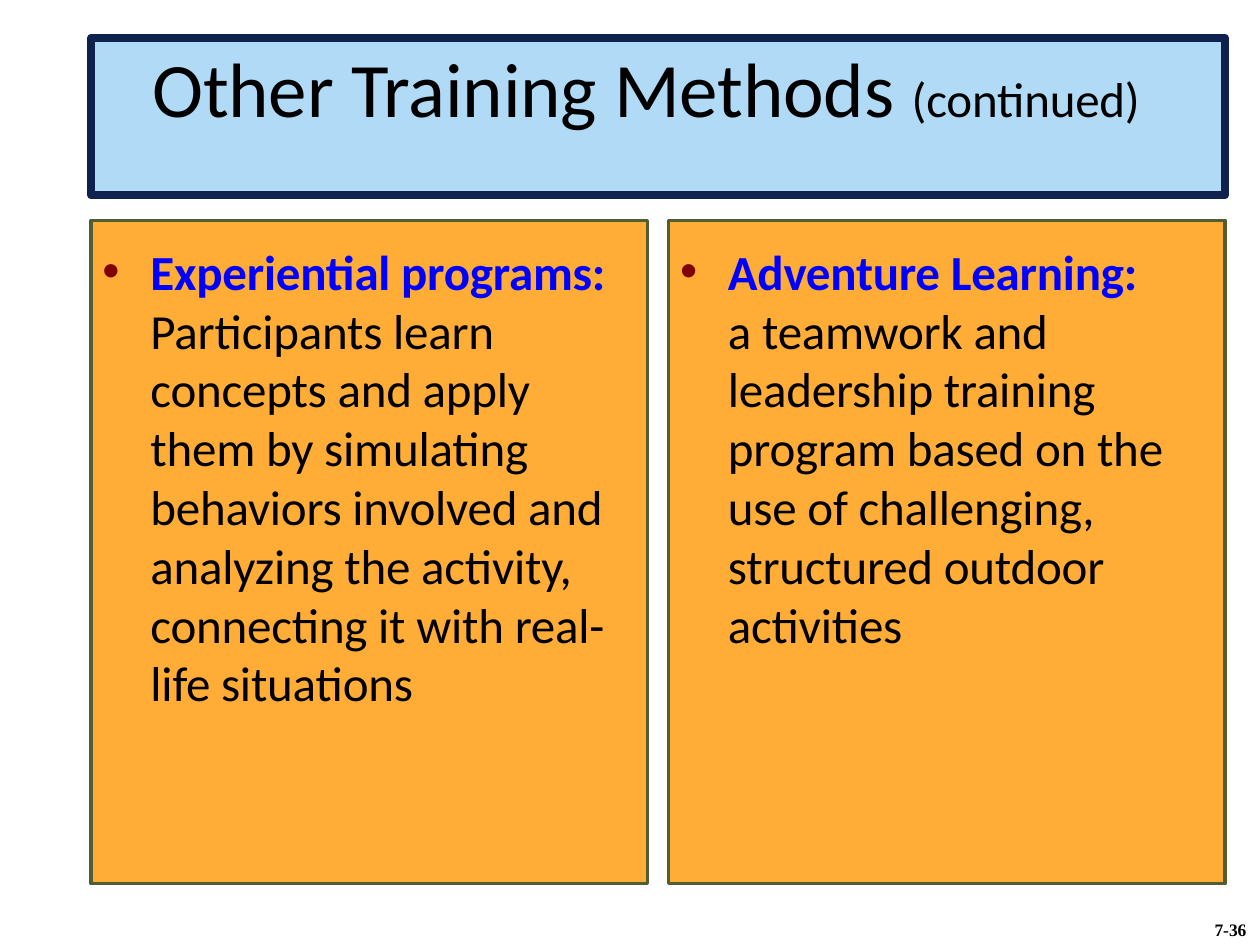
import pptx
import pptx.dml.color
import pptx.enum.shapes
import pptx.enum.text
import pptx.oxml
import pptx.oxml.ns
import pptx.util

Pt = pptx.util.Pt
LEFT = 52
PANEL_TOP = 126
PANEL_WIDTH = 318
PANEL_HEIGHT = 379
PANEL_PITCH = 330

PANELS = [
    (
        "Experiential programs:",
        "Participants learn concepts and apply them by simulating behaviors "
        "involved and analyzing the activity, connecting it with real-life situations",
    ),
    (
        "Adventure Learning:",
        "a teamwork and leadership training program based on the use of "
        "challenging, structured outdoor activities",
    ),
]


def color(value):
    return pptx.dml.color.RGBColor.from_string(value)


def set_attributes(target, values):
    for name, value in values.items():
        setattr(target, name, value)


class SlideBuilder:
    font_name = "Calibri"
    text_color = "000000"

    def __init__(self, slide):
        self.slide = slide

    def place(self, shape, left, top, width, height):
        bounds = {"left": left, "top": top, "width": width, "height": height}
        set_attributes(shape, {name: Pt(value) for name, value in bounds.items()})

    def paint(self, shape, fill, line, line_width):
        shape.fill.solid()
        shape.fill.fore_color.rgb = color(fill)
        shape.line.color.rgb = color(line)
        shape.line.width = Pt(line_width)

    def frame(self, shape, left=0, top=0, right=0, wrap=True):
        set_attributes(shape.text_frame, {
            "margin_left": Pt(left),
            "margin_top": Pt(top),
            "margin_right": Pt(right),
            "margin_bottom": 0,
            "word_wrap": wrap,
            "auto_size": pptx.enum.text.MSO_AUTO_SIZE.NONE,
            "vertical_anchor": pptx.enum.text.MSO_ANCHOR.TOP,
        })
        paragraph = shape.text_frame.paragraphs[0]
        paragraph.alignment = pptx.enum.text.PP_ALIGN.LEFT
        return paragraph

    def run(self, paragraph, text, size, bold=False, text_color=None, name=None, spacing=-10):
        run = paragraph.add_run()
        run.text = text
        set_attributes(run.font, {"name": name or self.font_name, "size": Pt(size), "bold": bold})
        run.font.color.rgb = color(text_color or self.text_color)
        run.font._element.set("spc", str(spacing))

    def bullet(self, paragraph, indent, bullet_color):
        properties = paragraph._p.get_or_add_pPr()
        properties.set("marL", str(Pt(indent)))
        properties.set("indent", str(-Pt(indent)))
        namespace = pptx.oxml.ns.nsdecls("a")
        for markup in (
            f'<a:buClr {namespace}><a:srgbClr val="{bullet_color}"/></a:buClr>',
            f'<a:buFont {namespace} typeface="Arial"/>',
            f'<a:buChar {namespace} char="•"/>',
        ):
            properties.append(pptx.oxml.parse_xml(markup))

    def title(self, text, suffix):
        shape = self.slide.shapes.title
        self.place(shape, LEFT, 21.6, PANEL_PITCH + PANEL_WIDTH, 90)
        self.paint(shape, "B0DAF5", "0F214E", 4.5)
        paragraph = self.frame(shape, left=35, top=1.5)
        self.run(paragraph, text, 44)
        self.run(paragraph, suffix, 28)

    def panel(self, left, heading, body):
        shape = self.slide.shapes.add_shape(
            pptx.enum.shapes.MSO_SHAPE.RECTANGLE,
            Pt(left), Pt(PANEL_TOP), Pt(PANEL_WIDTH), Pt(PANEL_HEIGHT),
        )
        shape.shadow.inherit = False
        self.paint(shape, "FFAD36", "535D32", 2)
        paragraph = self.frame(shape, left=6.6, top=12, right=19)
        self.bullet(paragraph, 27.4, "7F0000")
        paragraph.line_spacing = Pt(33.6)
        self.run(paragraph, heading, 28, bold=True, text_color="0000FF")
        paragraph.add_line_break()
        self.run(paragraph, body, 28)

    def page_number(self, text):
        shape = self.slide.shapes.add_textbox(Pt(694), Pt(525), Pt(21), Pt(12))
        paragraph = self.frame(shape, wrap=False)
        self.run(paragraph, text, 10, bold=True, name="Times New Roman", spacing=0)


def main():
    presentation = pptx.Presentation()
    set_attributes(presentation, {"slide_width": Pt(720), "slide_height": Pt(540)})
    builder = SlideBuilder(presentation.slides.add_slide(presentation.slide_layouts[5]))
    builder.title("Other Training Methods ", "(continued)")
    for index, (heading, body) in enumerate(PANELS):
        builder.panel(LEFT + index * PANEL_PITCH, heading, body)
    builder.page_number("7-36")
    presentation.save("out.pptx")


if __name__ == "__main__":
    main()
